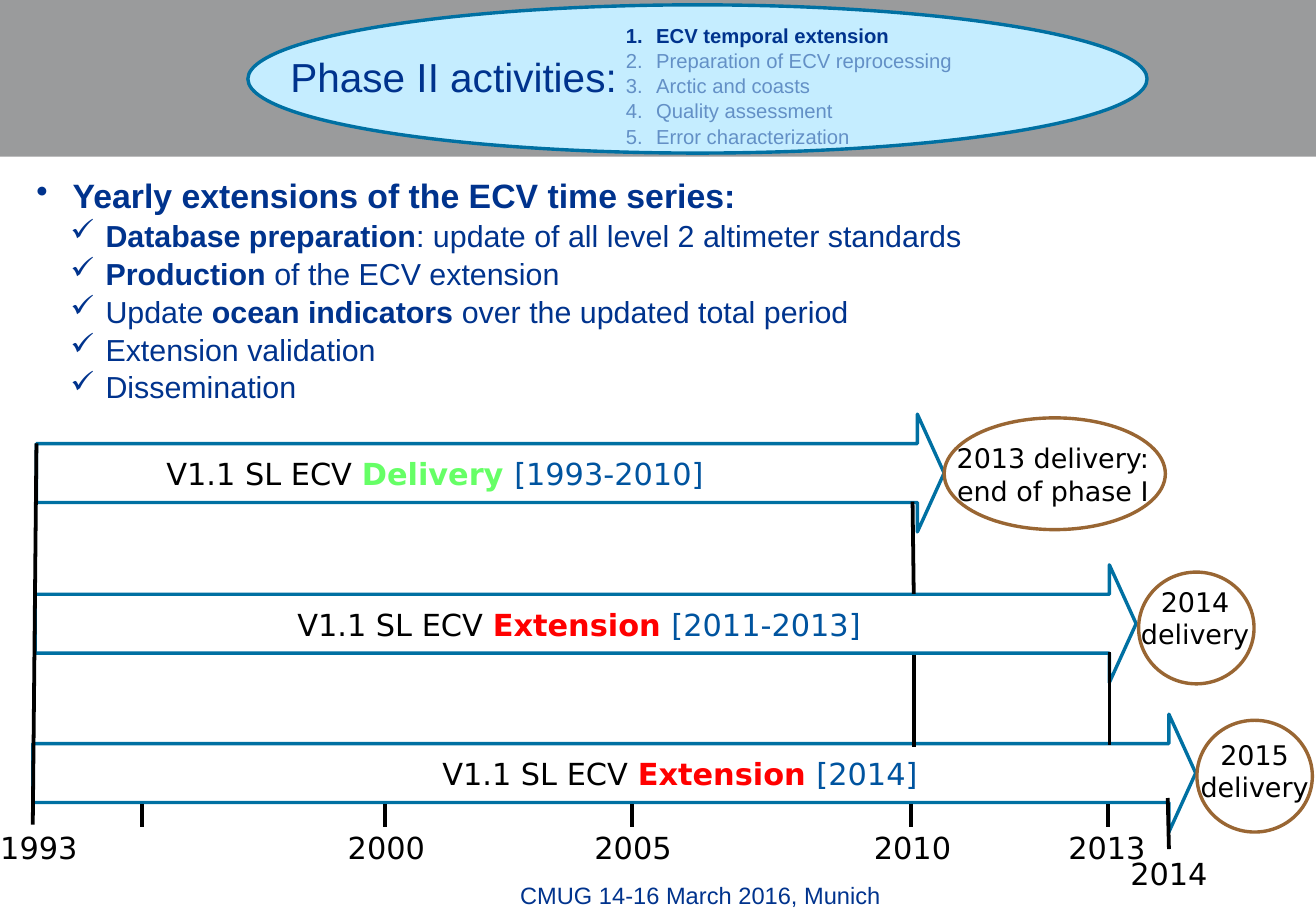
from lxml import etree
from pptx import Presentation
from pptx import util as u
from pptx.dml.color import RGBColor
from pptx.enum import shapes, text
from pptx.oxml import ns

NAVY = RGBColor(0x00, 0x33, 0x8D)
FADED_NAVY = RGBColor(0x63, 0x90, 0xC6)
BLUE = RGBColor(0x00, 0x54, 0x9F)
TEAL = RGBColor(0x00, 0x70, 0xA2)
PALE_BLUE = RGBColor(0xC5, 0xED, 0xFF)
GREY = RGBColor(0x9A, 0x9B, 0x9C)
BROWN = RGBColor(0x99, 0x66, 0x33)
GREEN = RGBColor(0x66, 0xFF, 0x66)
RED = RGBColor(0xFF, 0x00, 0x00)
BLACK = RGBColor(0x00, 0x00, 0x00)
WHITE = RGBColor(0xFF, 0xFF, 0xFF)

SANS = "Arial"
LABEL = "DejaVu Sans"
CENTER = text.PP_ALIGN.CENTER
LEFT = text.PP_ALIGN.LEFT
OVAL = shapes.MSO_SHAPE.OVAL
RECTANGLE = shapes.MSO_SHAPE.RECTANGLE


class Board:
    """Draws styled elements on the current slide."""

    def __init__(self, slide):
        self.slide = slide

    def shape(self, kind, box, fill=None, line=None):
        item = self.slide.shapes.add_shape(kind, *map(u.Inches, box))
        item.shadow.inherit = False
        if fill is None:
            item.fill.background()
        else:
            item.fill.solid()
            item.fill.fore_color.rgb = fill
        if line is None:
            item.line.fill.background()
        else:
            item.line.color.rgb = line
            item.line.width = u.Pt(2)
        return item

    def arrow(self, box):
        arrow = self.shape(shapes.MSO_SHAPE.RIGHT_ARROW, box, line=TEAL)
        arrow.adjustments[0] = 0.5
        arrow.adjustments[1] = 0.227

    def line(self, x1, y1, x2, y2):
        rule = self.slide.shapes.add_connector(
            shapes.MSO_CONNECTOR.STRAIGHT, *map(u.Inches, (x1, y1, x2, y2)))
        rule.line.color.rgb = BLACK
        rule.line.width = u.Pt(2.25)
        etree.SubElement(rule.element.spPr, ns.qn("a:effectLst"))

    def font(self, target, size, name, color, bold=None):
        target.size = u.Pt(size)
        target.name = name
        target.color.rgb = color
        target.bold = bold

    def text(self, box, lines, size, name=LABEL, color=BLACK, align=CENTER):
        frame = self.slide.shapes.add_textbox(*map(u.Inches, box)).text_frame
        frame.word_wrap = True
        for i, words in enumerate(lines):
            paragraph = frame.add_paragraph() if i else frame.paragraphs[0]
            paragraph.text = words
            paragraph.alignment = align
            self.font(paragraph.font, size, name, color)
        return frame

    def title(self, words, box, size):
        title = self.slide.shapes.title
        title.left, title.top, title.width, title.height = map(u.Inches, box)
        frame = title.text_frame
        frame.text = words
        frame.word_wrap = False
        frame.auto_size = text.MSO_AUTO_SIZE.NONE
        frame.vertical_anchor = text.MSO_ANCHOR.MIDDLE
        frame.paragraphs[0].alignment = LEFT
        self.font(frame.paragraphs[0].font, size, SANS, NAVY)
        title.element.getparent().append(title.element)

    def bullet(self, paragraph, margin, hang, tag, **mark):
        properties = paragraph._p.get_or_add_pPr()
        properties.set("marL", str(u.Inches(margin)))
        properties.set("indent", str(-u.Inches(hang)))
        etree.SubElement(properties, ns.qn(tag), **mark)
        paragraph.line_spacing = 1.04

    def runs(self, paragraph, pieces):
        for words, bold, color in pieces:
            run = paragraph.add_run()
            run.text = words
            run.font.bold = bold
            if color is not None:
                run.font.color.rgb = color

    def period_label(self, box, stage, stage_color, years):
        label = self.shape(RECTANGLE, box, WHITE)
        label.text_frame.word_wrap = True
        paragraph = label.text_frame.paragraphs[0]
        paragraph.alignment = CENTER
        self.font(paragraph.font, 18, LABEL, BLACK)
        self.runs(paragraph, [("V1.1 SL ECV ", False, BLACK),
                              (stage + " ", True, stage_color),
                              (years, False, BLUE)])


ACTIVITIES = ["ECV temporal extension", "Preparation of ECV reprocessing",
              "Arctic and coasts", "Quality assessment", "Error characterization"]
STEPS = [
    [("Database preparation", True), (": update of all level 2 altimeter standards", False)],
    [("Production", True), (" of the ECV extension", False)],
    [("Update ", False), ("ocean indicators ", True),
     ("over the updated total period", False)],
    [("Extension validation", False)],
    [("Dissemination", False)],
]
PERIODS = [
    ((0.3, 3.41, 7.47, 0.97), (1.03, 3.7, 5.1, 0.4), "Delivery", GREEN, "[1993-2010]"),
    ((0.29, 4.65, 9.06, 0.97), (2.12, 4.94, 5.29, 0.4), "Extension", RED, "[2011-2013]"),
    ((0.27, 5.88, 9.57, 0.97), (2.87, 6.17, 5.45, 0.4), "Extension", RED, "[2014]"),
]
DELIVERIES = [
    ((7.77, 3.44, 1.82, 0.92), (7.63, 3.59, 2.07, 0.64), ["2013 delivery: end of phase I"]),
    ((9.37, 4.71, 0.95, 0.92), (9.23, 4.77, 1.21, 0.64), ["2014", "delivery"]),
    ((9.85, 5.93, 0.95, 0.92), (9.72, 6.03, 1.21, 0.64), ["2015", "delivery"]),
]
YEARS = [("1993", 0.32, 6.78), ("2000", 3.18, 6.78), ("2005", 5.21, 6.78),
         ("2010", 7.51, 6.78), ("2013", 9.11, 6.78), ("2014", 9.62, 6.99)]
TICKS = [1.17, 3.17, 5.2, 7.5, 9.12]
BOUNDARIES = [(0.27, 6.79, 0.3, 3.65), (7.51, 4.13, 7.52, 4.89),
              (7.52, 5.39, 7.52, 6.15), (9.13, 5.37, 9.13, 6.13),
              (9.61, 6.57, 9.62, 6.99)]


def main():
    deck = Presentation()
    deck.slide_width, deck.slide_height = u.Inches(10.83), u.Inches(7.5)
    board = Board(deck.slides.add_slide(deck.slide_layouts[5]))

    board.shape(RECTANGLE, (0, 0, 10.83, 1.29), GREY)
    board.shape(OVAL, (2.04, 0.04, 7.4, 1.22), PALE_BLUE, TEAL)
    board.title("Phase II activities:", (2.29, 0.38, 3.01, 0.5), 24)

    agenda = board.text((5.08, 0.32, 4.05, 0.76), [""] * len(ACTIVITIES), 12, SANS, NAVY, LEFT)
    agenda.vertical_anchor = text.MSO_ANCHOR.MIDDLE
    agenda.margin_left = agenda.margin_right = u.Inches(0.07)
    agenda.margin_top = agenda.margin_bottom = u.Inches(0.07)
    for i, (paragraph, activity) in enumerate(zip(agenda.paragraphs, ACTIVITIES)):
        paragraph._p.get_or_add_pPr().clear()
        board.bullet(paragraph, 0.25, 0.25, "a:buAutoNum", type="arabicPeriod")
        paragraph.text = activity
        board.font(paragraph.font, 12, SANS, FADED_NAVY if i else NAVY, i == 0)

    plan = board.text((0.2, 1.38, 10.41, 1.95), [""] * (len(STEPS) + 1), 18, SANS, NAVY, LEFT)
    heading = [("Yearly extensions of the ECV time series:", True)]
    for i, (paragraph, pieces) in enumerate(zip(plan.paragraphs, [heading] + STEPS)):
        paragraph._p.get_or_add_pPr().clear()
        if i:
            paragraph.level = 1
            board.bullet(paragraph, 0.57, 0.29, "a:buChar", char="✓")
        else:
            board.bullet(paragraph, 0.3, 0.3, "a:buChar", char="•")
        board.font(paragraph.font, 18 if i else 20, SANS, NAVY)
        board.runs(paragraph, [(words, bold, None) for words, bold in pieces])

    for arrow, label, stage, color, years in PERIODS:
        board.period_label(label, stage, color, years)
        board.arrow(arrow)
    for x in TICKS:
        board.line(x, 6.62, x, 6.81)
    for ends in BOUNDARIES:
        board.line(*ends)
    for year, center, top in YEARS:
        board.text((center - 0.5, top, 1, 0.4), [year], 18)
    for oval, caption, lines in DELIVERIES:
        board.shape(OVAL, oval, line=BROWN)
        board.text(caption, lines, 16)

    board.text((2.11, 7.2, 7.31, 0.3), ["CMUG 14-16 March 2016, Munich"], 14, SANS, NAVY)
    deck.save("out.pptx")


if __name__ == "__main__":
    main()
